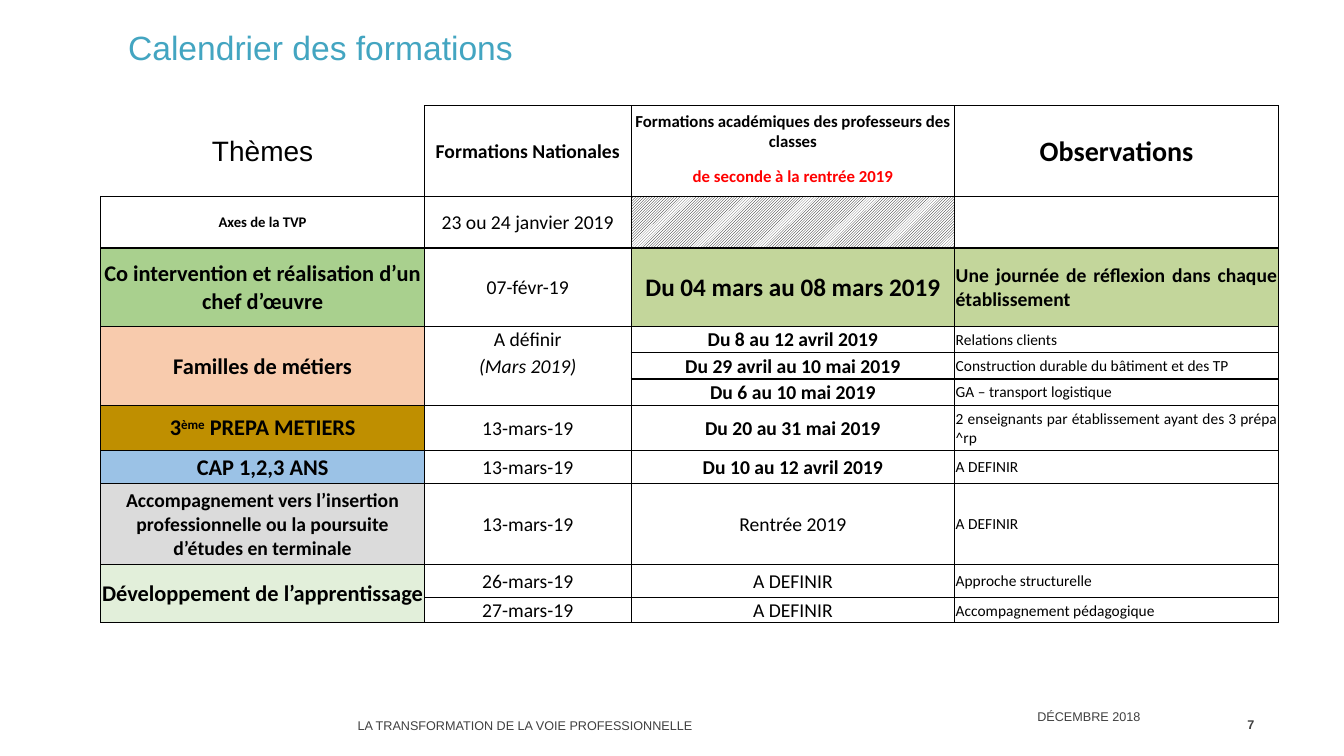
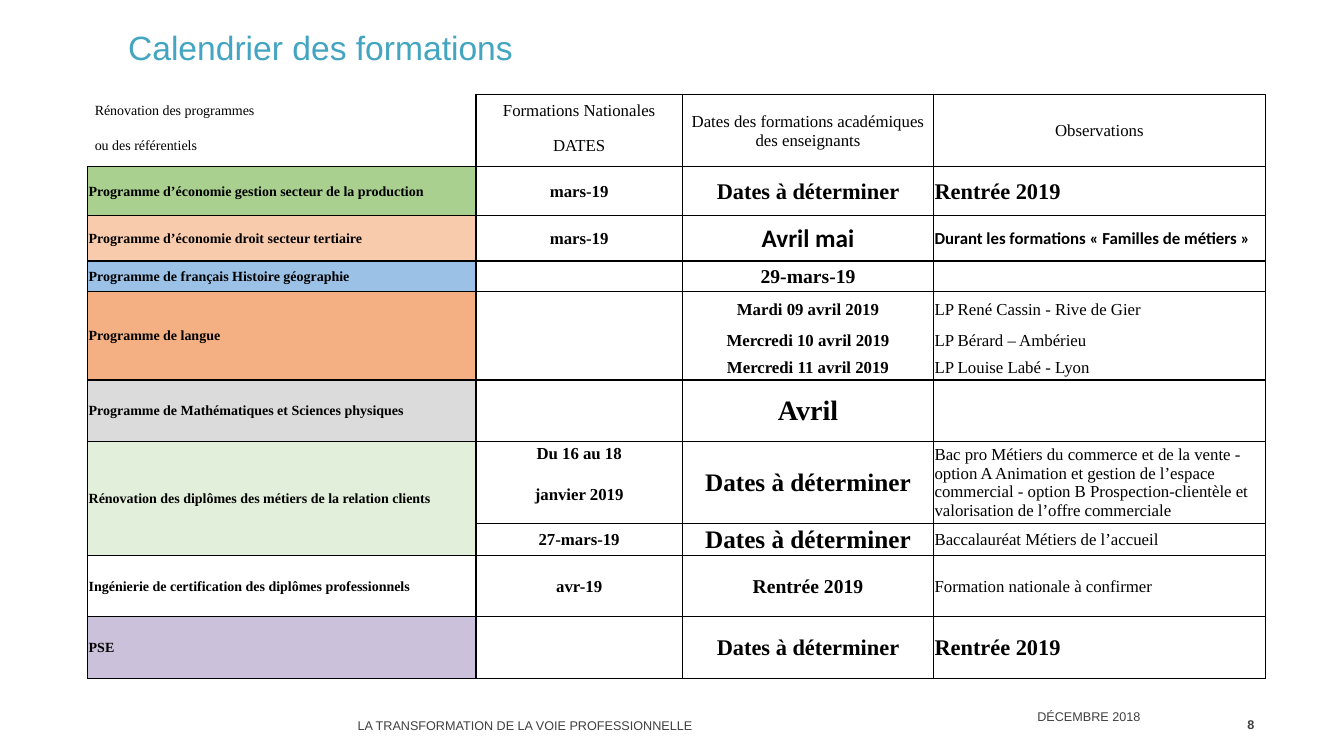
import pptx
import pptx.util
import pptx.dml.color
import pptx.enum.dml
import pptx.enum.text
import pptx.oxml.ns
import lxml.etree
from dataclasses import dataclass

Inches = pptx.util.Inches
Pt = pptx.util.Pt
RGB = pptx.dml.color.RGBColor.from_string
Align = pptx.enum.text.PP_ALIGN
Anchor = pptx.enum.text.MSO_ANCHOR
qn = pptx.oxml.ns.qn


@dataclass(frozen=True)
class Theme:
    sans: str = "Arial"
    body: str = "Calibri"
    serif: str = "Times New Roman"
    ink: str = "000000"
    paper: str = "FFFFFF"
    blue: str = "43A5C1"
    grey: str = "404040"
    red: str = "FF0000"
    green: str = "A9D08E"
    olive: str = "C3D69B"
    peach: str = "F8CBAD"
    gold: str = "BF8F00"
    sky: str = "9BC2E6"
    silver: str = "DBDBDB"
    mint: str = "E2EFDA"
    orange: str = "F4B083"
    mauve: str = "CCC1DA"
    foot: float = 9
    tiny: float = 10
    small: float = 10.5
    note: float = 11
    text: float = 12
    date: float = 14
    head: float = 16
    big: float = 18
    huge: float = 20
    title: float = 24
    line: float = 1


T = Theme()
ALIGN = {"c": Align.CENTER, "l": Align.LEFT, "j": Align.JUSTIFY}
SIDES = {"l": "a:lnL", "r": "a:lnR", "t": "a:lnT", "b": "a:lnB"}


def apply(thing, values):
    for name, value in values.items():
        setattr(thing, name, value)


def style(font, face, size, tint, bold=False, italic=False):
    apply(font, {"name": face, "size": Pt(size), "bold": bold, "italic": italic})
    font.color.rgb = RGB(tint)


def label(slide, box, words, align=Align.LEFT, bold=False):
    frame = slide.shapes.add_textbox(*map(Inches, box)).text_frame
    apply(frame, {"word_wrap": True, "vertical_anchor": Anchor.MIDDLE})
    para = frame.paragraphs[0]
    para.alignment = align
    run = para.add_run()
    run.text = words
    style(run.font, T.sans, T.foot, T.grey, bold)


def footer(slide, box, number):
    left, top, wide, high = box
    label(slide, (left, top, 5.17, high), "LA TRANSFORMATION DE LA VOIE PROFESSIONNELLE")
    label(slide, (left + 6.74, top - 0.09, 1.69, high), "DÉCEMBRE 2018")
    label(slide, (left + wide - 0.66, top - 0.01, 0.66, high), str(number), Align.RIGHT, True)


def title(slide, box, words):
    shape = slide.shapes.title
    apply(shape, dict(zip(("left", "top", "width", "height"), map(Inches, box))))
    frame = shape.text_frame
    apply(frame, {"word_wrap": True, "vertical_anchor": Anchor.TOP,
                  "auto_size": pptx.enum.text.MSO_AUTO_SIZE.NONE})
    para = frame.paragraphs[0]
    para.alignment = Align.LEFT
    run = para.add_run()
    run.text = words
    style(run.font, T.sans, T.title, T.blue)


def item(words="", size=T.tiny, bold=True, align="c", **more):
    base = {"words": words, "size": size, "bold": bold, "align": align, "italic": False,
            "face": None, "tint": T.ink, "fill": None, "edge": "lrtb", "span": 1, "inset": 0.01}
    return {**base, **more}


def plain(words, size, align="c", **more):
    return item(words, size, False, align, **more)


def border(cell, edge):
    props = cell._tc.get_or_add_tcPr()
    for side, tag in SIDES.items():
        line = lxml.etree.SubElement(props, qn(tag), w=str(Pt(T.line)))
        if side in edge:
            fill = lxml.etree.SubElement(line, qn("a:solidFill"))
            lxml.etree.SubElement(fill, qn("a:srgbClr"), val=T.ink)
        else:
            lxml.etree.SubElement(line, qn("a:noFill"))


def paint(fill, tint):
    if tint is None:
        fill.background()
    elif tint == "hatch":
        fill.patterned()
        fill.pattern = pptx.enum.dml.MSO_PATTERN.LIGHT_UPWARD_DIAGONAL
        fill.fore_color.rgb = RGB(T.ink)
        fill.back_color.rgb = RGB(T.paper)
    else:
        fill.solid()
        fill.fore_color.rgb = RGB(tint)


def write(cell, data, face):
    edge = Inches(0.01)
    apply(cell, {"margin_left": Inches(data["inset"]), "margin_right": edge, "margin_top": edge,
                 "margin_bottom": 0, "vertical_anchor": Anchor.MIDDLE})
    border(cell, data["edge"])
    paint(cell.fill, data["fill"])
    para = cell.text_frame.paragraphs[0]
    para.alignment = ALIGN[data["align"]]
    if not data["words"]:
        lxml.etree.SubElement(para._p, qn("a:endParaRPr"), sz=str(T.tiny * 100))
        return
    for index, part in enumerate(data["words"].split("|")):
        run = para.add_run()
        run.text = part
        style(run.font, data["face"] or face, data["size"], data["tint"],
              data["bold"], data["italic"])
        if index % 2:
            run._r.get_or_add_rPr().set("baseline", "30000")


def grid(slide, spot, wides, highs, rows, face):
    box = (*spot, sum(wides), sum(highs))
    table = slide.shapes.add_table(len(highs), len(wides), *map(Inches, box)).table
    apply(table, {"first_row": False, "horz_banding": False})
    mark = table._tbl.find(".//" + qn("a:tableStyleId"))
    mark.text = "{2D5ABB26-0587-4C30-8999-92F81FD0307C}"
    for col, wide in zip(table.columns, wides):
        col.width = Inches(wide)
    above = [None] * len(wides)
    for r, (high, row) in enumerate(zip(highs, rows)):
        table.rows[r].height = Inches(high)
        for c, data in enumerate(row):
            data = data or {**above[c], "words": "", "span": 1}
            above[c] = data
            write(table.cell(r, c), data, face)
            if data["span"] > 1:
                table.cell(r, c).merge(table.cell(r + data["span"] - 1, c))


def themes(slide, spot):
    rows = [
        [plain("Thèmes", T.huge, face=T.sans, edge="rb", span=2),
         item("Formations Nationales", T.date, span=2),
         item("Formations académiques des professeurs des classes", T.text, edge="ltr"),
         item("Observations", T.huge, span=2)],
        [None, None, item("de seconde à la rentrée 2019", T.text, tint=T.red, edge="lrb"), None],
        [item("Axes de la TVP", T.small), plain("23 ou 24 janvier 2019", T.date),
         item(fill="hatch"), item()],
        [item("Co intervention et réalisation d’un chef d’œuvre", T.head, fill=T.green),
         plain("07-févr-19", T.date),
         item("Du 04 mars au 08 mars 2019", T.big, fill=T.olive),
         item("Une journée de réflexion dans chaque établissement", T.date, align="j", fill=T.olive)],
        [item("Familles de métiers", T.head, fill=T.peach, span=3),
         plain("A définir", T.date, edge="ltr"),
         item("Du 8 au 12 avril 2019", T.date), plain("Relations clients", T.note, "j")],
        [None, plain("(Mars 2019)", T.date, italic=True, edge="lr"),
         item("Du 29 avril au 10 mai 2019", T.date),
         plain("Construction durable du bâtiment et des TP", T.note, "j")],
        [None, item(edge="lrb"), item("Du 6 au 10 mai 2019", T.date),
         plain("GA – transport logistique", T.note, "j")],
        [item("3|ème| PREPA METIERS", T.head, fill=T.gold), plain("13-mars-19", T.date),
         item("Du 20 au 31 mai 2019", T.date),
         plain("2 enseignants par établissement ayant des 3 prépa ^rp", T.note, "j")],
        [item("CAP 1,2,3 ANS", T.head, fill=T.sky), plain("13-mars-19", T.date),
         item("Du 10 au 12 avril 2019", T.date), plain("A DEFINIR", T.note, "j")],
        [item("Accompagnement vers l’insertion professionnelle ou la poursuite d’études en terminale",
              T.date, fill=T.silver),
         plain("13-mars-19", T.date), plain("Rentrée 2019", T.date), plain("A DEFINIR", T.note, "j")],
        [item("Développement de l’apprentissage", T.head, fill=T.mint, span=2),
         plain("26-mars-19", T.date), plain("A DEFINIR", T.date),
         plain("Approche structurelle", T.note, "j")],
        [None, plain("27-mars-19", T.date), plain("A DEFINIR", T.date),
         plain("Accompagnement pédagogique", T.note, "j")],
    ]
    highs = [0.5, 0.4, 0.51, 0.78, 0.26, 0.26, 0.26, 0.45, 0.33, 0.8, 0.33, 0.25]
    grid(slide, spot, [3.21, 2.05, 3.21, 3.21], highs, rows, T.body)


def course(words, fill=None, span=1):
    return item(words, T.tiny, align="l", fill=fill, span=span)


def programs(slide, spot):
    rows = [
        [plain("Rénovation des programmes", T.tiny, "l", inset=0.07, edge="r"),
         plain("Formations Nationales", T.text, edge="ltr"),
         plain("Dates des formations académiques des enseignants", T.text, span=2),
         plain("Observations", T.text, span=2)],
        [plain("ou des référentiels", T.tiny, "l", inset=0.07, edge="rb"),
         plain("DATES", T.text, edge="lrb"), None, None],
        [course("Programme d’économie gestion secteur de la production", T.green),
         item("mars-19", T.text), item("Dates à déterminer", T.head),
         item("Rentrée 2019", T.head, align="l")],
        [course("Programme d’économie droit secteur tertiaire", T.peach),
         item("mars-19", T.text), item("Avril mai", T.big, face=T.body),
         item("Durant les formations « Familles de métiers »", T.text, align="l", face=T.body)],
        [course("Programme de français Histoire géographie", T.sky),
         item(), item("29-mars-19", T.date), item()],
        [course("Programme de langue", T.orange, 3), item(span=3),
         item("Mardi 09 avril 2019", T.text, edge="ltr"),
         plain("LP René Cassin - Rive de Gier", T.text, "l", edge="ltr")],
        [None, None, item("Mercredi 10 avril 2019", T.text, edge="lr"),
         plain("LP Bérard – Ambérieu", T.text, "l", edge="lr")],
        [None, None, item("Mercredi 11 avril 2019", T.text, edge="lrb"),
         plain("LP Louise Labé - Lyon", T.text, "l", edge="lrb")],
        [course("Programme de Mathématiques et Sciences physiques", T.silver),
         item(), item("Avril", T.huge), item()],
        [course("Rénovation des diplômes des métiers de la relation clients", T.mint, 3),
         item("Du 16 au 18", T.text, edge="ltr"),
         item("Dates à déterminer", T.big, span=2),
         plain("Bac pro Métiers du commerce et de la vente - option A Animation et gestion de "
               "l’espace commercial - option B Prospection-clientèle et valorisation de l’offre "
               "commerciale", T.text, "l", span=2)],
        [None, item("janvier 2019", T.text, edge="lrb"), None, None],
        [None, item("27-mars-19", T.text), item("Dates à déterminer", T.big),
         plain("Baccalauréat Métiers de l’accueil", T.text, "l")],
        [course("Ingénierie de certification des diplômes professionnels"),
         item("avr-19", T.text), item("Rentrée 2019", T.date),
         plain("Formation nationale à confirmer", T.text, "l")],
        [course("PSE", T.mauve), item(), item("Dates à déterminer", T.head),
         item("Rentrée 2019", T.head, align="l")],
    ]
    highs = [0.3, 0.38, 0.49, 0.45, 0.3, 0.35, 0.27, 0.26, 0.61, 0.23, 0.57, 0.32, 0.61, 0.61]
    grid(slide, spot, [3.85, 2.05, 2.49, 3.29], highs, rows, T.serif)


def main():
    deck = pptx.Presentation()
    apply(deck, {"slide_width": Inches(13.33), "slide_height": Inches(7.5)})
    plan = [(themes, (1, 1.05)), (programs, (0.87, 0.94))]
    for number, (fill, spot) in enumerate(plan, 7):
        slide = deck.slides.add_slide(deck.slide_layouts[5])
        title(slide, (1.17, 0.22, 11.49, 0.48), "Calendrier des formations")
        footer(slide, (3.45, 7, 9.09, 0.4), number)
        fill(slide, spot)
    deck.save("out.pptx")


if __name__ == "__main__":
    main()
